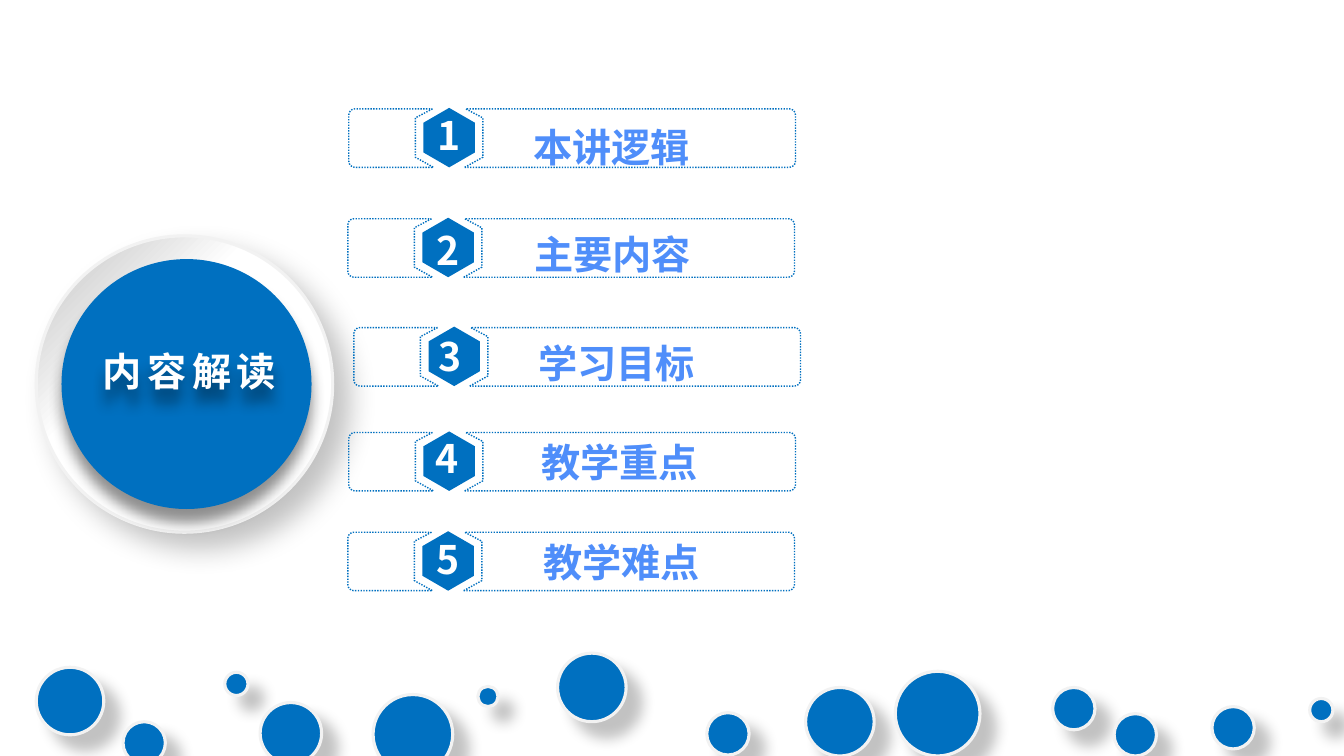
from dataclasses import dataclass
from math import cos, radians, sin

from lxml import etree
from pptx import Presentation
from pptx.dml.color import RGBColor
from pptx.enum.dml import MSO_LINE
from pptx.enum.shapes import MSO_SHAPE
from pptx.enum.text import MSO_AUTO_SIZE
from pptx.oxml.ns import qn
from pptx.util import Inches, Pt

ELLIPSE = MSO_SHAPE.OVAL
DOTTED = MSO_LINE.ROUND_DOT
FIT_TEXT = MSO_AUTO_SIZE.SHAPE_TO_FIT_TEXT

BLUE = "0070C0"
LABEL_BLUE = "4F8EFA"
WHITE = "FFFFFF"
RIM = "F2F2F2"
TEXT_HEIGHT = 0.57
FRAME_WIDTH, FRAME_HEIGHT, CORNER_RADIUS = 4.43, 0.58, 0.06
HEXAGON_LEFT, HEXAGON_WIDTH, HEXAGON_HEIGHT = 0.74, 0.51, 0.59

Point = tuple[float, float]


@dataclass(frozen=True)
class Shadow:
    alpha: int
    blur: int
    distance: int
    angle: int


@dataclass(frozen=True)
class Circle:
    left: float
    top: float
    size: float


@dataclass(frozen=True)
class Text:
    words: str
    left: float
    top: float
    width: float
    wrap: bool = False
    color: str = LABEL_BLUE
    font: str = "Arial"


@dataclass(frozen=True)
class Topic:
    left: float
    top: float
    number: Text
    label: Text


def number(words: str, left: float, top: float, width: float = 0.77) -> Text:
    return Text(words, left, top, width, True, WHITE, "Noto Sans CJK SC")


DOT_SHADOW = Shadow(23, 10, 15, 45)
RING_SHADOW = Shadow(23, 20, 15, 45)
DISC_SHADOW = Shadow(43, 10, 10, 90)

RING = Circle(0.36, 2.34, 2.94)
DISC = Circle(0.61, 2.57, 2.48)
DOTS = [
    Circle(0.36, 6.62, 0.67),
    Circle(1.22, 7.16, 0.42),
    Circle(2.23, 6.67, 0.23),
    Circle(2.58, 6.97, 0.61),
    Circle(3.7, 6.89, 0.79),
    Circle(4.74, 6.81, 0.2),
    Circle(5.53, 6.48, 0.68),
    Circle(7.01, 7.07, 0.42),
    Circle(7.99, 6.82, 0.68),
    Circle(8.88, 6.66, 0.84),
    Circle(10.44, 6.82, 0.42),
    Circle(11.05, 7.08, 0.42),
    Circle(12.02, 7.01, 0.42),
    Circle(12.99, 6.93, 0.23),
]
HEADING = Text("内容解读", 0.92, 3.4, 2, color=WHITE)
TOPICS = [
    Topic(3.46, 1.08, number("1", 4.24, 1.06, 0.61), Text("本讲逻辑", 5.19, 1.17, 2.35, True)),
    Topic(3.45, 2.17, number("2", 4.23, 2.2), Text("主要内容", 5.2, 2.24, 1.78)),
    Topic(3.51, 3.25, number("3", 4.25, 3.25), Text("学习目标", 5.24, 3.32, 1.78)),
    Topic(3.46, 4.29, number("4", 4.22, 4.26), Text("教学重点", 5.27, 4.3, 1.77)),
    Topic(3.45, 5.28, number("5", 4.23, 5.26), Text("教学难点", 5.29, 5.29, 1.78)),
]


def rgb(color: str) -> RGBColor:
    return RGBColor.from_string(color)


def paint(shape, color: str) -> None:
    shape.fill.solid()
    shape.fill.fore_color.rgb = rgb(color)


def cast_shadow(shape, shadow: Shadow) -> None:
    shape.shadow.inherit = False
    effects = shape._element.spPr.find(qn("a:effectLst"))
    outer = etree.SubElement(
        effects, qn("a:outerShdw"),
        blurRad=str(Pt(shadow.blur)), dist=str(Pt(shadow.distance)),
        dir=str(shadow.angle * 60000), algn="ctr", rotWithShape="0",
    )
    black = etree.SubElement(outer, qn("a:srgbClr"), val="000000")
    etree.SubElement(black, qn("a:alpha"), val=str(shadow.alpha * 1000))


def draw_circle(shapes, circle: Circle, shadow: Shadow, rim: bool = True):
    size = Inches(circle.size)
    shape = shapes.add_shape(ELLIPSE, Inches(circle.left), Inches(circle.top), size, size)
    paint(shape, BLUE)
    if rim:
        shape.line.color.rgb = rgb(RIM)
        shape.line.width = Pt(2.25)
    else:
        shape.line.fill.background()
    cast_shadow(shape, shadow)
    return shape


def draw_text(shapes, text: Text):
    box = shapes.add_textbox(
        Inches(text.left), Inches(text.top), Inches(text.width), Inches(TEXT_HEIGHT)
    )
    frame = box.text_frame
    frame.word_wrap = text.wrap
    frame.auto_size = FIT_TEXT
    paragraph = frame.paragraphs[0]
    paragraph.text = text.words
    paragraph.font.name = text.font
    paragraph.font.size = Pt(28)
    paragraph.font.bold = True
    paragraph.font.color.rgb = rgb(text.color)
    return box


def draw_outline(shapes, left: float, top: float, contours: list[list[Point]]):
    placed = [[(Inches(left + x), Inches(top + y)) for x, y in contour] for contour in contours]
    builder = shapes.build_freeform(*placed[0][0])
    builder.add_line_segments(placed[0][1:], close=True)
    for contour in placed[1:]:
        builder.move_to(*contour[0])
        builder.add_line_segments(contour[1:], close=True)
    shape = builder.convert_to_shape()
    shape.shadow.inherit = False
    return shape


def corner(x: float, y: float, start: int) -> list[Point]:
    angles = [radians(start + 22.5 * step) for step in range(5)]
    return [(x + CORNER_RADIUS * cos(a), y + CORNER_RADIUS * sin(a)) for a in angles]


def frame_contours() -> list[list[Point]]:
    near, low = CORNER_RADIUS, FRAME_HEIGHT - CORNER_RADIUS
    far = FRAME_WIDTH - CORNER_RADIUS
    left_part = [(0.83, 0), (0.66, 0.09), (0.66, 0.48), (0.84, FRAME_HEIGHT)]
    left_part += corner(near, low, 90) + corner(near, near, 180)
    right_part = [(1.15, FRAME_HEIGHT), (1.33, 0.48), (1.33, 0.09), (1.16, 0)]
    right_part += corner(far, near, 270) + corner(far, low, 0)
    return [left_part, right_part]


def hexagon_contour() -> list[Point]:
    middle, upper, lower = HEXAGON_WIDTH / 2, HEXAGON_HEIGHT / 4, HEXAGON_HEIGHT * 3 / 4
    return [
        (middle, 0), (HEXAGON_WIDTH, upper), (HEXAGON_WIDTH, lower),
        (middle, HEXAGON_HEIGHT), (0, lower), (0, upper),
    ]


def draw_topic(shapes, topic: Topic) -> None:
    members = shapes.add_group_shape().shapes
    frame = draw_outline(members, topic.left, topic.top, frame_contours())
    frame.fill.background()
    frame.line.color.rgb = rgb(BLUE)
    frame.line.width = Pt(1)
    frame.line.dash_style = DOTTED
    hexagon = draw_outline(
        members, topic.left + HEXAGON_LEFT, topic.top - 0.01, [hexagon_contour()]
    )
    paint(hexagon, BLUE)
    hexagon.line.fill.background()
    draw_text(members, topic.number)
    draw_text(shapes, topic.label)


def main() -> None:
    deck = Presentation()
    deck.slide_width, deck.slide_height = Inches(13.33), Inches(7.5)
    shapes = deck.slides.add_slide(deck.slide_layouts[6]).shapes
    ring = draw_circle(shapes, RING, RING_SHADOW)
    ring.fill.gradient()
    ring.fill.gradient_angle = 315
    for stop, (position, color) in zip(ring.fill.gradient_stops, [(0, "BFBFBF"), (0.37, WHITE)]):
        stop.position = position
        stop.color.rgb = rgb(color)
    draw_circle(shapes, DISC, DISC_SHADOW, rim=False)
    for dot in DOTS:
        draw_circle(shapes, dot, DOT_SHADOW)
    heading = draw_text(shapes, HEADING)
    heading.text_frame.paragraphs[0].runs[0].font._element.set("spc", "400")
    cast_shadow(heading, DISC_SHADOW)
    for topic in TOPICS:
        draw_topic(shapes, topic)
    deck.save("out.pptx")


if __name__ == "__main__":
    main()
